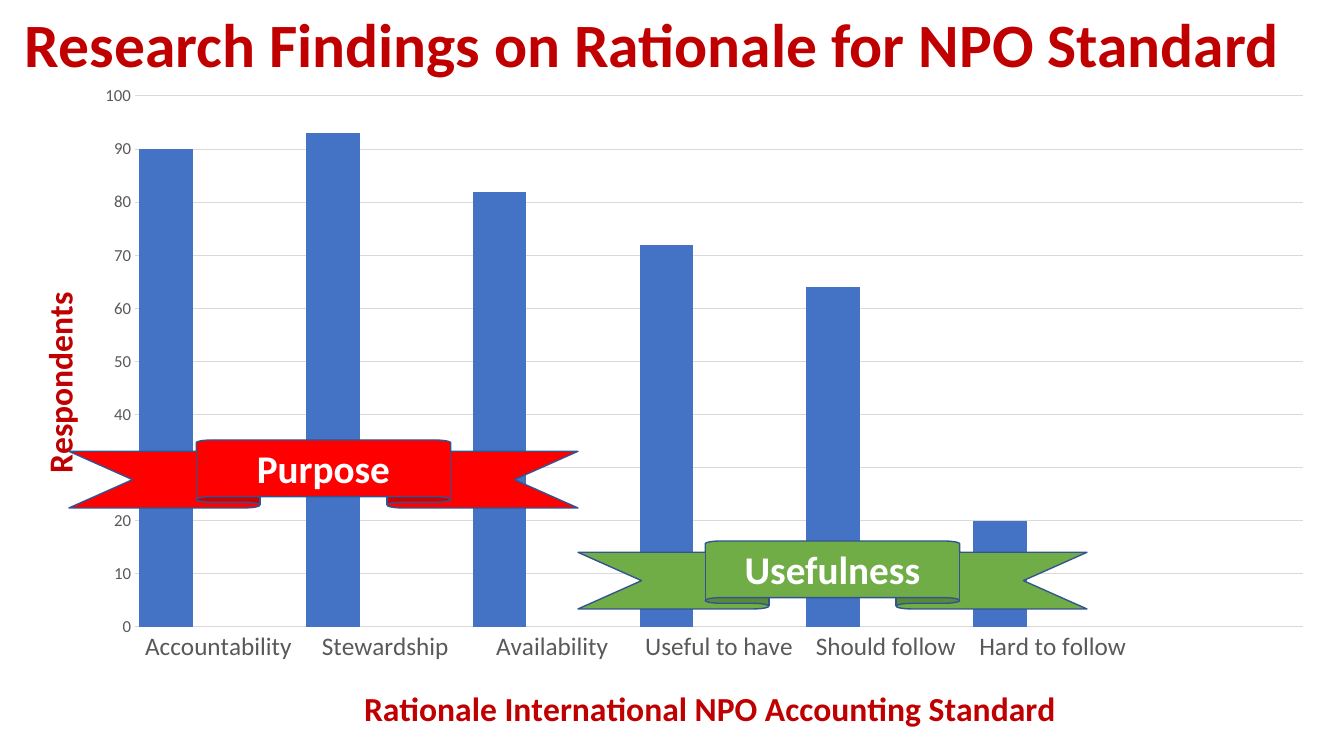
from dataclasses import dataclass

from lxml import etree
from pptx import Presentation
from pptx.chart.data import CategoryChartData
from pptx.dml.color import RGBColor
from pptx.enum.chart import XL_CHART_TYPE, XL_TICK_MARK
from pptx.enum.shapes import MSO_SHAPE
from pptx.enum.text import MSO_ANCHOR, PP_ALIGN
from pptx.oxml.ns import qn
from pptx.util import Emu, Pt

COLUMNS = XL_CHART_TYPE.COLUMN_CLUSTERED
NO_TICK = XL_TICK_MARK.NONE
RIBBON = MSO_SHAPE.UP_RIBBON
MIDDLE = MSO_ANCHOR.MIDDLE
CENTER = PP_ALIGN.CENTER

EMU_PER_PX = 914400 / 100.8
FONT = "Calibri"
CRIMSON, GREY, RULE = "C00000", "595959", "D9D9D9"


@dataclass(frozen=True)
class Box:
    left: int
    top: int
    width: int
    height: int

    def emu(self) -> tuple[Emu, ...]:
        sides = (self.left, self.top, self.width, self.height)
        return tuple(Emu(round(side * EMU_PER_PX)) for side in sides)


@dataclass(frozen=True)
class Ribbon:
    label: str
    box: Box
    fill: str


@dataclass(frozen=True)
class Series:
    name: str
    values: tuple
    color: str


SLIDE_BOX = Box(0, 0, 1344, 756)
TITLE_BOX = Box(15, 4, 1282, 87)
CHART_BOX = Box(0, 73, 1330, 669)
PLOT_BOX = Box(135, 96, 1168, 531)

CATEGORIES = ("Accountability", "Stewardship", "Availability",
              "Useful to have", "Should follow", "Hard to follow")
EMPTY = (None,) * 7
SERIES = (
    Series("Series 1", (90, 93, 82, 72, 64, 20, None), "4472C4"),
    Series("Series 2", EMPTY, "ED7D31"),
    Series("Series 3", EMPTY, "A5A5A5"),
)
RIBBONS = (
    Ribbon("Purpose", Box(69, 440, 509, 68), "FF0000"),
    Ribbon("Usefulness", Box(578, 541, 509, 68), "70AD47"),
)


def rgb(color: str) -> RGBColor:
    return RGBColor.from_string(color)


def style_font(font, size: int, color: str, bold: bool = False) -> None:
    for name, value in {"name": FONT, "size": Pt(size), "bold": bold}.items():
        setattr(font, name, value)
    font.color.rgb = rgb(color)


def style_line(line, color: str, width: float) -> None:
    line.color.rgb = rgb(color)
    line.width = Pt(width)


def write_text(frame, text: str, size: int, color: str):
    frame.word_wrap = True
    frame.vertical_anchor = MIDDLE
    para = frame.paragraphs[0]
    span = para.add_run()
    span.text = text
    style_font(span.font, size, color, True)
    return para


def place_in_chart(parent, index: int, values: dict) -> None:
    """Give a chart part a manual layout, in fractions of the chart."""
    for old in parent.findall(qn("c:layout")):
        parent.remove(old)
    layout = etree.Element(qn("c:layout"))
    manual = etree.SubElement(layout, qn("c:manualLayout"))
    for tag, value in values.items():
        etree.SubElement(manual, qn(f"c:{tag}")).set("val", str(value))
    parent.insert(index, layout)


def position(left: int, top: int) -> dict:
    return {"xMode": "edge", "yMode": "edge",
            "x": (left - CHART_BOX.left) / CHART_BOX.width,
            "y": (top - CHART_BOX.top) / CHART_BOX.height}


def style_axis(axis, title: str, size: int, left: int, top: int) -> None:
    axis.major_tick_mark = axis.minor_tick_mark = NO_TICK
    style_font(axis.tick_labels.font, size, GREY)
    para = axis.axis_title.text_frame.paragraphs[0]
    span = para.add_run()
    span.text = title
    style_font(span.font, 24, CRIMSON, True)
    place_in_chart(axis.axis_title._element, 1, position(left, top))


def add_findings_chart(page) -> None:
    data = CategoryChartData()
    data.categories = CATEGORIES
    for series in SERIES:
        data.add_series(series.name, series.values)
    chart = page.shapes.add_chart(COLUMNS, *CHART_BOX.emu(), data).chart
    chart.has_legend = chart.has_title = False
    style_font(chart.font, 10, "000000")

    # Columns
    plot = chart.plots[0]
    plot.gap_width, plot.overlap, plot.vary_by_categories = 15, 2, False
    for drawn, series in zip(plot.series, SERIES):
        drawn.format.fill.solid()
        drawn.format.fill.fore_color.rgb = rgb(series.color)

    # Axes
    style_axis(chart.category_axis,
               "Rationale International NPO Accounting Standard", 18, 358, 680)
    style_line(chart.category_axis.format.line, RULE, 0.75)
    scale = chart.value_axis
    style_axis(scale, "Respondents", 12, 31, 286)
    scale.minimum_scale, scale.maximum_scale, scale.major_unit = 0, 100, 10
    scale.format.line.fill.background()
    style_line(scale.major_gridlines.format.line, RULE, 0.75)

    # Plot area
    plot_area = chart._chartSpace.find(f".//{qn('c:plotArea')}")
    place_in_chart(plot_area, 0, {
        "layoutTarget": "inner", **position(PLOT_BOX.left, PLOT_BOX.top),
        "w": PLOT_BOX.width / CHART_BOX.width,
        "h": PLOT_BOX.height / CHART_BOX.height})


def add_ribbon(page, ribbon: Ribbon) -> None:
    shape = page.shapes.add_shape(RIBBON, *ribbon.box.emu())
    shape.shadow.inherit = False
    shape.fill.solid()
    shape.fill.fore_color.rgb = rgb(ribbon.fill)
    style_line(shape.line, "325491", 1)
    para = write_text(shape.text_frame, ribbon.label, 28, "FFFFFF")
    para.alignment = CENTER


def main() -> None:
    deck = Presentation()
    deck.slide_width, deck.slide_height = SLIDE_BOX.emu()[2:]
    page = deck.slides.add_slide(deck.slide_layouts[6])

    # Title
    title = page.shapes.add_textbox(*TITLE_BOX.emu())
    para = write_text(title.text_frame,
                      "Research Findings on Rationale for NPO Standard",
                      44, CRIMSON)
    para.line_spacing = 0.9

    # Chart with ribbons in front
    add_findings_chart(page)
    for ribbon in RIBBONS:
        add_ribbon(page, ribbon)
    deck.save("out.pptx")


if __name__ == "__main__":
    main()
